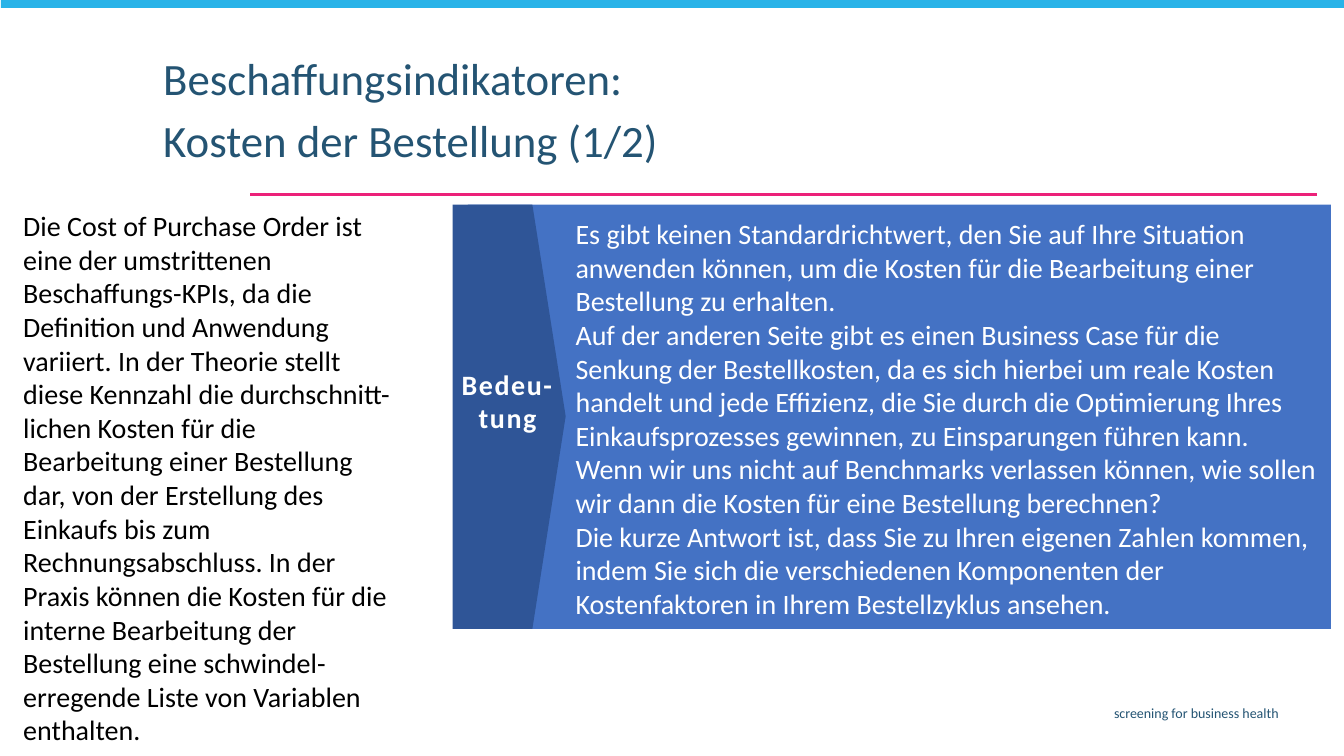
from dataclasses import dataclass

from lxml.etree import SubElement
from pptx import Presentation
from pptx.dml.color import RGBColor as Color
from pptx.enum.shapes import MSO_CONNECTOR as Connector, MSO_SHAPE as Shape
from pptx.enum.text import MSO_ANCHOR as Anchor, PP_ALIGN as Align
from pptx.oxml.ns import qn
from pptx.util import Inches, Pt


@dataclass(frozen=True)
class Theme:
    """Colours, font and type sizes of the slide."""
    font: str = "Calibri"
    heading: str = "245473"
    bar: str = "29B3E8"
    rule: str = "EC2179"
    panel: str = "4472C4"
    tab: str = "2F5597"
    dark: str = "000000"
    light: str = "FFFFFF"
    title_size: int = 32
    body_size: int = 20
    footer_size: int = 10


class SlideBuilder:
    """Draws styled elements on one slide."""

    def __init__(self, slide, theme):
        self.slide = slide
        self.theme = theme

    def paint(self, shape, color):
        """Give a shape a plain fill without line or shadow."""
        shape.shadow.inherit = False
        shape.fill.solid()
        shape.fill.fore_color.rgb = Color.from_string(color)
        shape.line.fill.background()

    def bar(self, left, top, width, height, color):
        """Add a filled rectangle."""
        shape = self.slide.shapes.add_shape(
            Shape.RECTANGLE, Inches(left), Inches(top), Inches(width), Inches(height))
        self.paint(shape, color)

    def polygon(self, points, color):
        """Add a filled closed outline."""
        corners = [(Inches(x), Inches(y)) for x, y in points]
        builder = self.slide.shapes.build_freeform(*corners[0])
        builder.add_line_segments(corners[1:], close=True)
        self.paint(builder.convert_to_shape(), color)

    def rule(self, start, end, color, width):
        """Add a straight line."""
        line = self.slide.shapes.add_connector(
            Connector.STRAIGHT, *(Inches(value) for value in (*start, *end)))
        line.line.color.rgb = Color.from_string(color)
        line.line.width = Pt(width)
        SubElement(line._element.spPr, qn("a:effectLst"))

    def text(self, box, paragraphs, size, color, align=Align.LEFT, anchor=Anchor.TOP,
             margins=(0.1, 0.05), bold=False, tracking=0, line_spacing=None, gap=0):
        """Add a wrapped text box with one style throughout."""
        shape = self.slide.shapes.add_textbox(*(Inches(value) for value in box))
        frame = shape.text_frame
        frame.word_wrap = True
        frame.vertical_anchor = anchor
        frame.margin_left = frame.margin_right = Inches(margins[0])
        frame.margin_top = frame.margin_bottom = Inches(margins[1])
        frame.text = "\n".join(paragraphs)
        for index, paragraph in enumerate(frame.paragraphs):
            paragraph.alignment = align
            paragraph.line_spacing = line_spacing
            paragraph.space_before = Pt(gap if index else 0)
            for run in paragraph.runs:
                run.font.name = self.theme.font
                run.font.size = Pt(size)
                run.font.bold = bold
                run.font.color.rgb = Color.from_string(color)
                if tracking:
                    run.font._element.set("spc", str(round(tracking * 100)))


TITLE = ["Beschaffungsindikatoren:", "Kosten der Bestellung (1/2)"]
DEFINITION = [
    "Die Cost of Purchase Order ist eine der umstrittenen Beschaffungs-KPIs, da die "
    "Definition und Anwendung variiert. In der Theorie stellt diese Kennzahl die "
    "durchschnitt-lichen Kosten für die Bearbeitung einer Bestellung dar, von der "
    "Erstellung des Einkaufs bis zum Rechnungsabschluss. In der Praxis können die "
    "Kosten für die interne Bearbeitung der Bestellung eine schwindel-erregende Liste "
    "von Variablen enthalten."]
MEANING = [
    "Es gibt keinen Standardrichtwert, den Sie auf Ihre Situation anwenden können, um "
    "die Kosten für die Bearbeitung einer Bestellung zu erhalten.",
    "Auf der anderen Seite gibt es einen Business Case für die Senkung der "
    "Bestellkosten, da es sich hierbei um reale Kosten handelt und jede Effizienz, die "
    "Sie durch die Optimierung Ihres Einkaufsprozesses gewinnen, zu Einsparungen "
    "führen kann.",
    "Wenn wir uns nicht auf Benchmarks verlassen können, wie sollen wir dann die Kosten "
    "für eine Bestellung berechnen?",
    "Die kurze Antwort ist, dass Sie zu Ihren eigenen Zahlen kommen, indem Sie sich die "
    "verschiedenen Komponenten der Kostenfaktoren in Ihrem Bestellzyklus ansehen."]


def main():
    """Build and save the slide."""
    presentation = Presentation()
    presentation.slide_width = Inches(13.33)
    presentation.slide_height = Inches(7.5)
    theme = Theme()
    slide = presentation.slides.add_slide(presentation.slide_layouts[6])
    builder = SlideBuilder(slide, theme)

    builder.rule((13.06, 1.93), (2.48, 1.93), theme.rule, 1.5)
    builder.bar(0.01, -0.02, 13.34, 0.1, theme.bar)
    builder.text((3.65, 6.94, 9.13, 0.29), ["screening for business health"],
                 theme.footer_size, theme.heading, align=Align.RIGHT)
    builder.text((1.52, 0.51, 8.41, 1.45), TITLE, theme.title_size, theme.heading,
                 line_spacing=0.9, gap=10)
    builder.text((0.14, 2.03, 3.92, 5.14), DEFINITION, theme.body_size, theme.dark,
                 margins=(0.09, 0.04))

    top, middle, bottom = 2.03, 4.13, 6.24
    builder.polygon([(4.64, top), (5.55, middle), (4.64, bottom), (13.2, bottom),
                     (13.2, top)], theme.panel)
    builder.polygon([(5.28, bottom), (4.49, bottom), (4.49, top), (5.28, top),
                     (5.61, middle)], theme.tab)
    builder.text((4.57, 3.64, 0.93, 0.67), ["Bedeu-tung"], theme.body_size, theme.light,
                 align=Align.CENTER, anchor=Anchor.MIDDLE, margins=(0, 0), bold=True,
                 tracking=1.1)
    builder.text((5.61, 2.1, 7.61, 4.14), MEANING, theme.body_size, theme.light)

    presentation.save("out.pptx")


if __name__ == "__main__":
    main()
